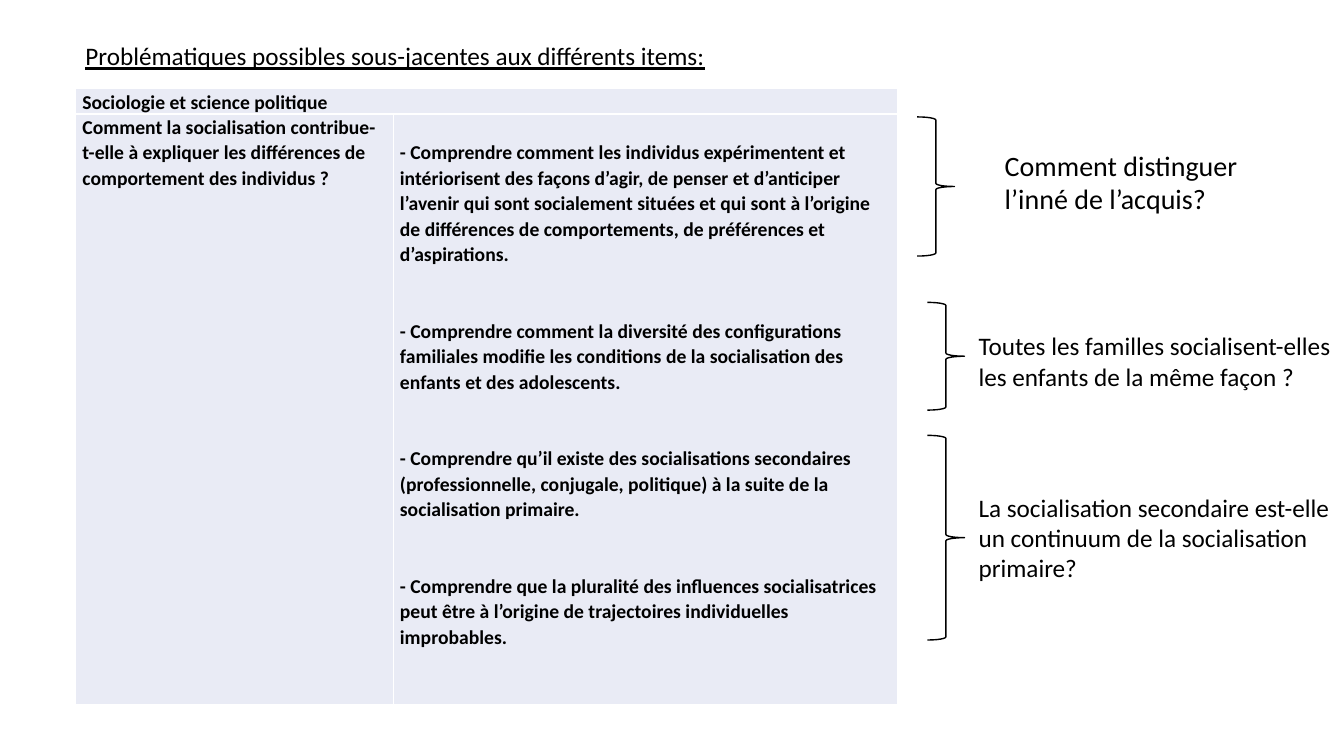
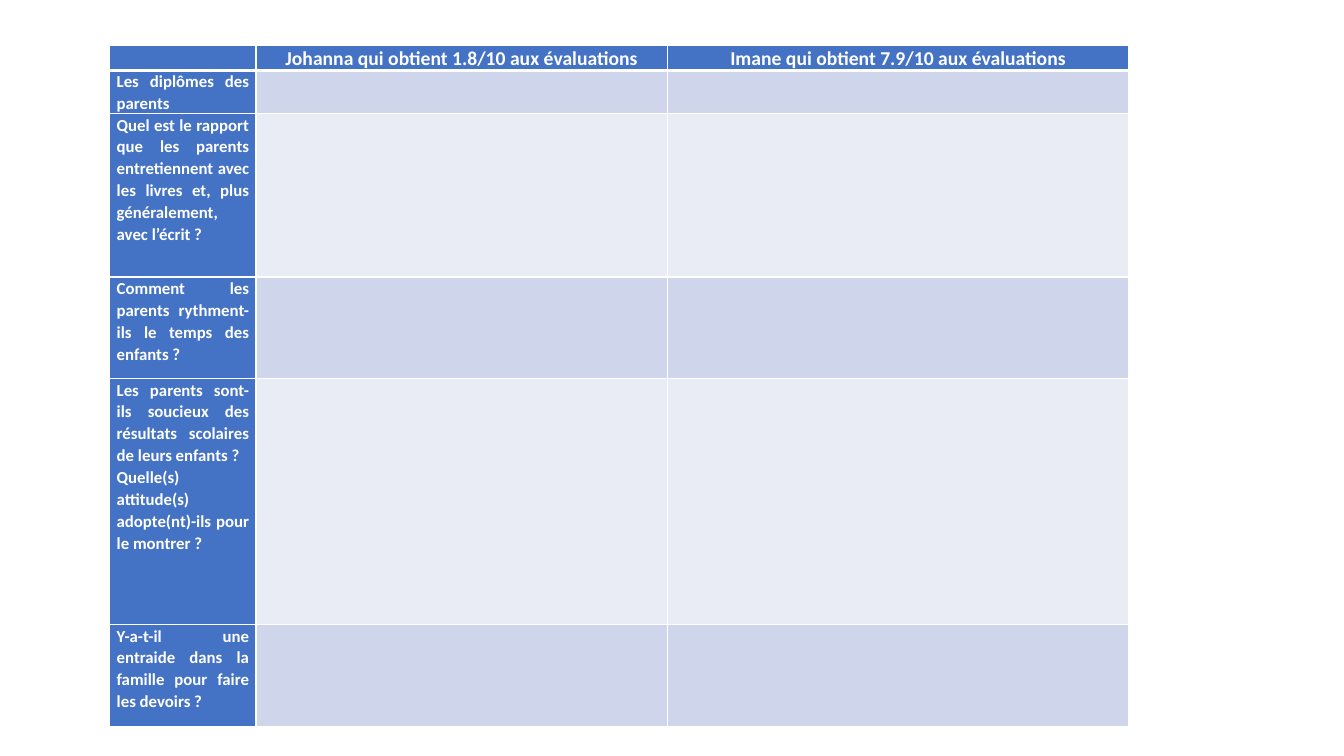
import dataclasses

import lxml.etree
import pptx
import pptx.dml.color
import pptx.enum.shapes
import pptx.enum.text
import pptx.oxml.ns
import pptx.util

Pt = pptx.util.Pt
Align = pptx.enum.text.PP_ALIGN
AutoSize = pptx.enum.text.MSO_AUTO_SIZE


def rgb(code):
    return pptx.dml.color.RGBColor.from_string(code)


@dataclasses.dataclass(frozen=True)
class Theme:
    font: str = "Calibri"
    black: str = "000000"
    white: str = "FFFFFF"
    blue: str = "4472C4"
    band: str = "CFD5EA"
    pale: str = "E9EBF5"
    small: float = 12
    cell: float = 14
    body: float = 18
    large: float = 20
    cell_spacing: float = 1.07
    cell_inset: float = 4.9
    cell_line: float = 18.2  # height of one line of cell text


THEME = Theme()


# Text
def write(frame, texts, color=THEME.black, para_format=None, **font_format):
    """Fill a text frame with one paragraph for each text."""
    font_format = {"name": THEME.font, **font_format}
    for index, text in enumerate(texts):
        para = frame.add_paragraph() if index else frame.paragraphs[0]
        for name, value in (para_format or {}).items():
            if index or name != "space_before":
                setattr(para, name, value)
        span = para.add_run()
        span.text = text
        span.font.color.rgb = rgb(color)
        for name, value in font_format.items():
            setattr(span.font, name, value)


def add_text(page, at, texts, size, wrap=True, para_format=None, **font_format):
    box = page.shapes.add_textbox(*map(Pt, at))
    box.text_frame.word_wrap = wrap
    box.text_frame.auto_size = AutoSize.SHAPE_TO_FIT_TEXT
    write(box.text_frame, texts, para_format=para_format, size=Pt(size), **font_format)


# Shapes
def add_brace(page, at):
    brace = page.shapes.add_shape(
        pptx.enum.shapes.MSO_SHAPE.RIGHT_BRACE, *map(Pt, at))
    brace.shadow.inherit = False
    brace.fill.background()
    brace.line.color.rgb = rgb(THEME.black)
    brace.line.width = Pt(1)


# Tables
def set_borders(cell, widths):
    """Draw white borders; widths are left, right, top and bottom."""
    properties = cell._tc.get_or_add_tcPr()
    for index, (side, width) in enumerate(zip("LRTB", widths)):
        line = lxml.etree.Element(pptx.oxml.ns.qn("a:ln" + side), w=str(Pt(width)))
        fill = lxml.etree.SubElement(line, pptx.oxml.ns.qn("a:solidFill"))
        lxml.etree.SubElement(fill, pptx.oxml.ns.qn("a:srgbClr"), val=THEME.white)
        properties.insert(index, line)


def add_table(page, left, top, columns, rows, header_rule=1):
    shape = page.shapes.add_table(
        len(rows), len(columns), Pt(left), Pt(top), Pt(sum(columns)), Pt(sum(rows)))
    table = shape.table
    table.first_row = table.horz_banding = False
    for column, width in zip(table.columns, columns):
        column.width = Pt(width)
    for index, (row, height) in enumerate(zip(table.rows, rows)):
        row.height = Pt(height)
        above = header_rule if index == 1 else 1
        below = header_rule if index == 0 else 1
        for cell in row.cells:
            set_borders(cell, (1, 1, above, below))
    return table


def fill_cell(cell, fill, texts=(), size=THEME.cell, color=THEME.black,
              margin_top=0, **para_format):
    cell.fill.solid()
    cell.fill.fore_color.rgb = rgb(fill)
    margins = {"margin_left": THEME.cell_inset, "margin_right": THEME.cell_inset,
               "margin_top": margin_top, "margin_bottom": 0}
    for name, value in margins.items():
        setattr(cell, name, Pt(value))
    if texts:
        para_format["line_spacing"] = THEME.cell_spacing
        write(cell.text_frame, texts, color, para_format, size=Pt(size), bold=True)
    else:
        # Keeps an empty cell from stretching its row
        lxml.etree.SubElement(cell.text_frame.paragraphs[0]._p,
                              pptx.oxml.ns.qn("a:endParaRPr"), sz=str(THEME.small * 100))


# Slides
def build_issues(page):
    add_text(page, (54, 28, 695.5, 26.6),
             ["Problématiques possibles sous-jacentes aux différents items:"],
             THEME.body, para_format={"line_spacing": 0.9}, underline=True)

    # Syllabus
    table = add_table(page, 54, 63.4, columns=(226.8, 360), rows=(18, 422))
    table.cell(0, 0).merge(table.cell(0, 1))
    fill_cell(table.cell(0, 0), THEME.pale, ["Sociologie et science politique"])
    fill_cell(table.cell(1, 0), THEME.pale, [
        "Comment la socialisation contribue-t-elle à expliquer les différences de "
        "comportement des individus ?"])
    fill_cell(table.cell(1, 1), THEME.pale, [
        "- Comprendre comment les individus expérimentent et intériorisent des façons "
        "d’agir, de penser et d’anticiper l’avenir qui sont socialement situées et qui "
        "sont à l’origine de différences de comportements, de préférences et "
        "d’aspirations.",
        "- Comprendre comment la diversité des configurations familiales modifie les "
        "conditions de la socialisation des enfants et des adolescents.",
        "- Comprendre qu’il existe des socialisations secondaires (professionnelle, "
        "conjugale, politique) à la suite de la socialisation primaire.",
        "- Comprendre que la pluralité des influences socialisatrices peut être à "
        "l’origine de trajectoires individuelles improbables."],
        margin_top=THEME.cell_line, space_before=Pt(2 * THEME.cell_line))

    # Questions beside the syllabus
    for left, top, height in ((655.2, 83.5, 99.4), (662.4, 216, 77), (662.4, 311, 146.2)):
        add_brace(page, (left, top, 26.6, height))
    add_text(page, (710.6, 102.2, 195.8, 55.4),
             ["Comment distinguer", "l’inné de l’acquis?"], THEME.large)
    add_text(page, (691.9, 232.6, 269.3, 51.1),
             ["Toutes les familles socialisent-elles", "les enfants de la même façon ?"],
             THEME.body, wrap=False)
    add_text(page, (691.9, 347.8, 279.4, 72.7),
             ["La socialisation secondaire est-elle un continuum de la socialisation",
              "primaire?"], THEME.body)


def build_comparison(page):
    pupils = ("Johanna qui obtient 1.8/10 aux évaluations",
              "Imane qui obtient 7.9/10 aux évaluations")
    questions = (
        ["Les diplômes des parents"],
        ["Quel est le rapport que les parents entretiennent avec les livres et, plus "
         "généralement, avec l’écrit ?"],
        ["Comment les parents rythment-ils le temps des enfants ?"],
        ["Les parents sont-ils soucieux des résultats scolaires de leurs enfants ?",
         "Quelle(s) attitude(s) adopte(nt)-ils pour le montrer ?"],
        ["Y-a-t-il une entraide dans la famille pour faire les devoirs ?"],
    )
    table = add_table(page, 78.5, 32.4, columns=(104.4, 293.8, 329.8),
                      rows=(17.3, 28.8, 116.6, 72.7, 175.7, 72.7), header_rule=3)

    # Header row
    fill_cell(table.cell(0, 0), THEME.blue)
    for column, pupil in enumerate(pupils, 1):
        fill_cell(table.cell(0, column), THEME.blue, [pupil], color=THEME.white,
                  alignment=Align.CENTER)

    # Question rows with empty answers
    for row, question in enumerate(questions, 1):
        fill_cell(table.cell(row, 0), THEME.blue, question, THEME.small, THEME.white,
                  alignment=Align.JUSTIFY)
        for column in range(1, len(pupils) + 1):
            fill_cell(table.cell(row, column), THEME.band if row % 2 else THEME.pale)


def main():
    deck = pptx.Presentation()
    deck.slide_width, deck.slide_height = Pt(960), Pt(540)
    for build in (build_issues, build_comparison):
        build(deck.slides.add_slide(deck.slide_layouts[6]))
    deck.save("out.pptx")


if __name__ == "__main__":
    main()
